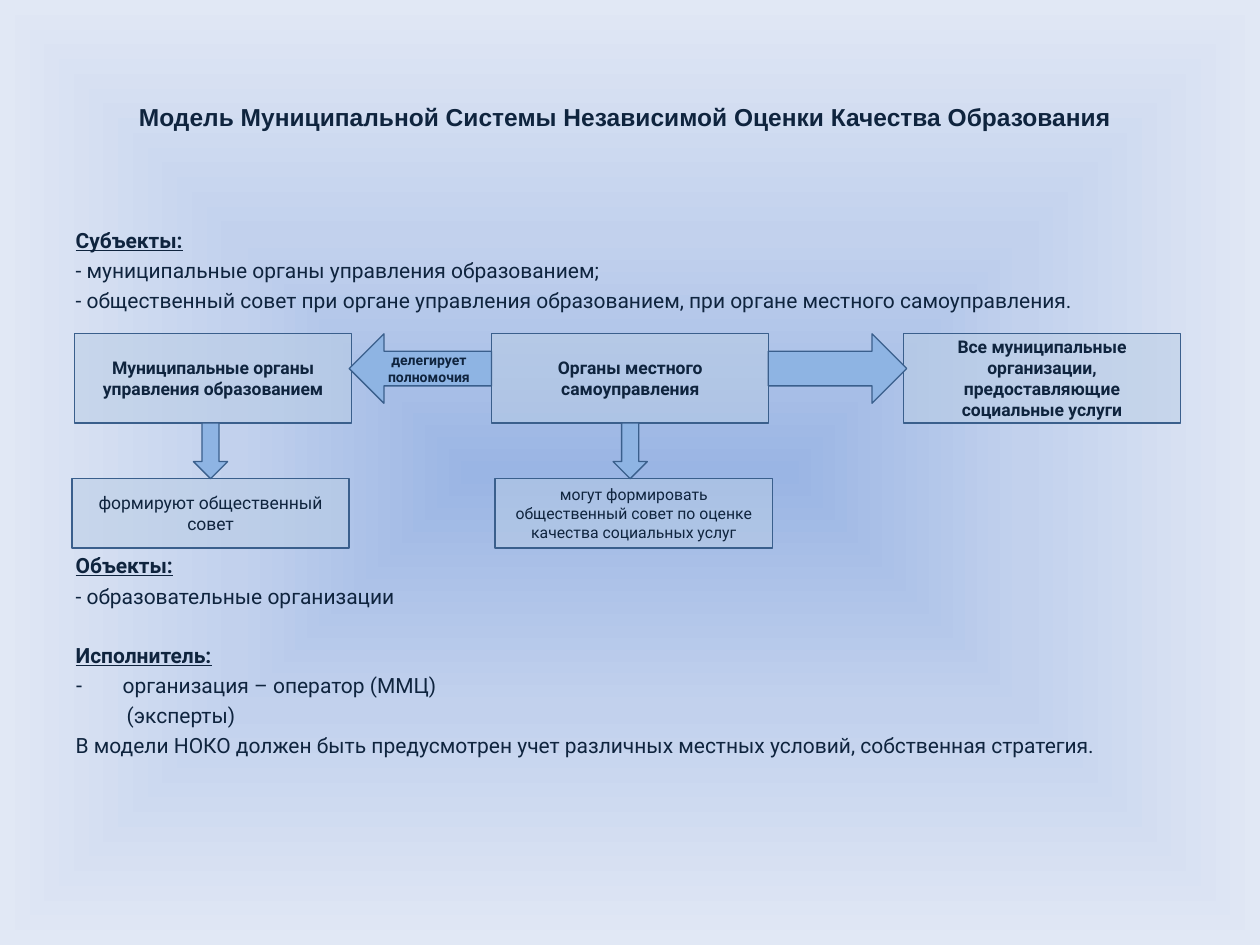
from dataclasses import dataclass
from pptx import Presentation
from pptx.dml.color import RGBColor
from pptx.enum.shapes import MSO_SHAPE
from pptx.enum.text import MSO_ANCHOR, MSO_AUTO_SIZE, PP_ALIGN
from pptx.oxml import parse_xml
from pptx.oxml.ns import nsdecls, qn
from pptx.util import Cm, Pt


@dataclass(frozen=True)
class Theme:
    ink: str = "0F243E"
    edge: str = "3A5F8C"
    pane: str = "B9CDE5"
    arrow: str = "8EB4E3"
    glow: tuple = ((0, "9AB5E4"), (50, "C2D1ED"), (100, "E1E8F5"))
    head: str = "Arial"
    face: str = "Roboto"
    title: float = 14
    body: float = 12
    label: float = 10
    small: float = 9
    tiny: float = 8
    gap: float = 2.8


@dataclass(frozen=True)
class Block:
    kind: MSO_SHAPE
    left: float
    top: float
    width: float
    height: float
    text: str = ""
    size: float = 10
    bold: bool = False


@dataclass(frozen=True)
class Line:
    text: str
    head: bool = False
    before: float = 2.8
    left: float = 0
    bullet: str = ""


LOOK = Theme()
WIDE = 5.59
ROW, BASE = 6.73, 9.65
HIGH, LOW = 1.8, 1.4
STEM, DROP = 0.69, 1.12

BLOCKS = [
    *(Block(MSO_SHAPE.RECTANGLE, left, ROW, WIDE, HIGH, text, LOOK.label, True)
      for left, text in (
          (1.5, "Муниципальные органы управления образованием"),
          (9.91, "Органы местного самоуправления"),
          (18.21, "Все муниципальные организации, предоставляющие социальные услуги"))),
    Block(MSO_SHAPE.RIGHT_ARROW, 15.49, ROW, 2.79, LOW),
    Block(MSO_SHAPE.LEFT_ARROW, 7.04, ROW, 2.87, LOW,
          "делегирует полномочия", LOOK.tiny, True),
    Block(MSO_SHAPE.RECTANGLE, 1.45, BASE, WIDE, LOW,
          "формируют общественный совет", LOOK.label),
    Block(MSO_SHAPE.RECTANGLE, 9.98, BASE, WIDE, LOW,
          "могут формировать общественный совет по оценке качества социальных услуг",
          LOOK.small),
    *(Block(MSO_SHAPE.DOWN_ARROW, left, ROW + HIGH, STEM, DROP) for left in (3.9, 12.36)),
]

LINES = [
    Line("Субъекты:", True),
    Line("- муниципальные органы управления образованием;"),
    Line("- общественный совет при органе управления образованием, "
         "при органе местного самоуправления."),
    Line("Объекты:", True, 137.4),
    Line("- образовательные организации"),
    Line("Исполнитель:", True, 19.6),
    Line("организация – оператор (ММЦ)", left=0.95, bullet="-"),
    Line("(эксперты)", left=1.03),
    Line("В модели НОКО должен быть предусмотрен учет различных местных условий, "
         "собственная стратегия."),
]


def write(par, text: str, *, size: float, font: str = LOOK.face, bold: bool = False,
          under: bool = False, align: PP_ALIGN = PP_ALIGN.CENTER) -> None:
    par.alignment = align
    run = par.add_run()
    run.text = text
    run.font.name = font
    run.font.size = Pt(size)
    run.font.bold = bold
    run.font.underline = under
    run.font.color.rgb = RGBColor.from_string(LOOK.ink)


def place(shape, left: float, top: float, width: float, height: float) -> None:
    shape.left, shape.top = Cm(left), Cm(top)
    shape.width, shape.height = Cm(width), Cm(height)


def paint(slide) -> None:
    stops = "".join(f'<a:gs pos="{pos * 1000}"><a:srgbClr val="{tone}"/></a:gs>'
                    for pos, tone in LOOK.glow)
    slide.element.cSld.insert(0, parse_xml(
        f'<p:bg {nsdecls("p", "a")}><p:bgPr><a:gradFill rotWithShape="1">'
        f'<a:gsLst>{stops}</a:gsLst><a:path path="shape">'
        '<a:fillToRect l="50000" t="50000" r="50000" b="50000"/></a:path>'
        '</a:gradFill><a:effectLst/></p:bgPr></p:bg>'))


def draw(slide, item: Block) -> None:
    shape = slide.shapes.add_shape(item.kind, Cm(item.left), Cm(item.top),
                                   Cm(item.width), Cm(item.height))
    pane = item.kind == MSO_SHAPE.RECTANGLE
    shape.shadow.inherit = False
    shape.fill.solid()
    shape.fill.fore_color.rgb = RGBColor.from_string(LOOK.pane if pane else LOOK.arrow)
    if pane:
        tone = shape.element.spPr.find(qn("a:solidFill"))[0]
        tone.append(parse_xml(f'<a:alpha {nsdecls("a")} val="50000"/>'))
    shape.line.color.rgb = RGBColor.from_string(LOOK.edge)
    shape.line.width = Pt(0)
    if item.text:
        frame = shape.text_frame
        frame.word_wrap = True
        frame.vertical_anchor = MSO_ANCHOR.MIDDLE
        write(frame.paragraphs[0], item.text, size=item.size, bold=item.bold)


def fill(frame, lines: list[Line]) -> None:
    frame.auto_size = MSO_AUTO_SIZE.NONE
    for rank, line in enumerate(lines):
        par = frame.add_paragraph() if rank else frame.paragraphs[0]
        par.space_before = Pt(line.before)
        write(par, line.text, size=LOOK.body, bold=line.head, under=line.head,
              align=PP_ALIGN.LEFT)
        props = par._p.get_or_add_pPr()
        props.set("marL", str(Cm(line.left)))
        props.set("indent", str(-Cm(line.left) if line.bullet else 0))
        mark = f'buChar char="{line.bullet}"' if line.bullet else "buNone"
        name, *rest = mark.split(" ", 1)
        props.append(parse_xml(f'<a:{name} {nsdecls("a")} {"".join(rest)}/>'))


def main() -> None:
    deck = Presentation()
    deck.slide_width, deck.slide_height = Cm(25.4), Cm(19.05)
    slide = deck.slides.add_slide(deck.slide_layouts[1])
    paint(slide)
    title, body = slide.shapes.title, slide.placeholders[1]
    place(title, 1.5, 0.76, 22.2, 3.18)
    title.text_frame.vertical_anchor = MSO_ANCHOR.MIDDLE
    title.text_frame.auto_size = MSO_AUTO_SIZE.NONE
    write(title.text_frame.paragraphs[0],
          "Модель Муниципальной Системы Независимой Оценки Качества Образования",
          size=LOOK.title, font=LOOK.head, bold=True)
    place(body, 1.27, 4.45, 22.86, 12.57)
    fill(body.text_frame, LINES)
    for item in BLOCKS:
        draw(slide, item)
    deck.save("out.pptx")


if __name__ == "__main__":
    main()
